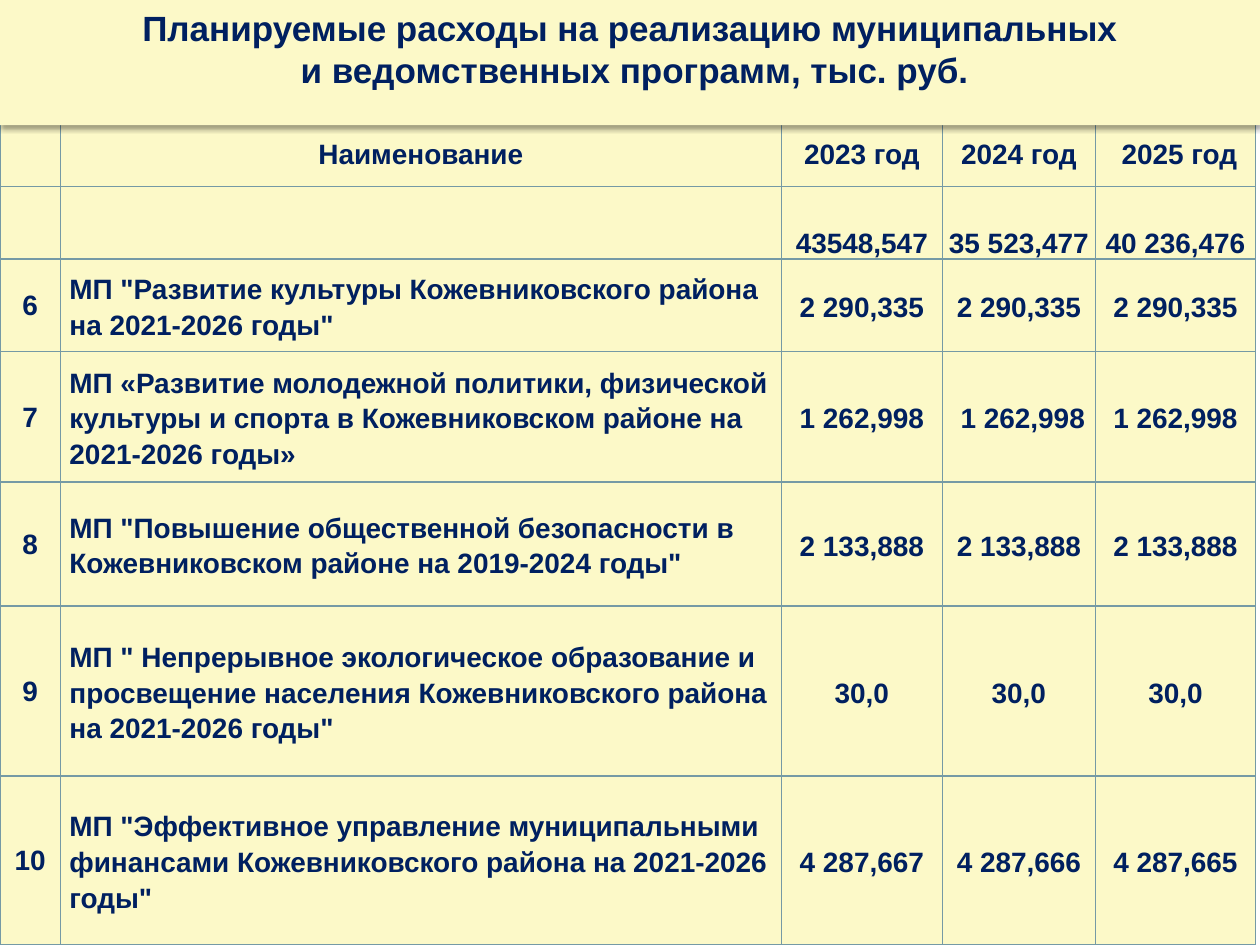
"""Build the slide of planned spending on municipal programmes."""
from dataclasses import dataclass

import pptx
import pptx.dml.color
import pptx.enum.shapes
import pptx.enum.text
import pptx.oxml
import pptx.oxml.ns
import pptx.util

Pt = pptx.util.Pt
Align = pptx.enum.text.PP_ALIGN
Anchor = pptx.enum.text.MSO_ANCHOR

HUES = {"cream": "FCF9C8", "navy": "002060", "edge": "759AA5", "shade": "000000"}
NS = pptx.oxml.ns.nsdecls("a")
WIDTHS = (34.5, 412, 92, 87.5, 91.5)
TITLE = (
    "Планируемые расходы на реализацию муниципальных",
    " и ведомственных программ, тыс. руб.",
)


@dataclass(frozen=True)
class Style:
    anchor: Anchor
    align: Align
    side: float
    top: float
    spacing: float


@dataclass(frozen=True)
class Row:
    height: float
    texts: tuple[str, ...]
    styles: tuple[Style, ...]


HEAD = Style(Anchor.MIDDLE, Align.CENTER, 0.7, 0.7, 1.0)
TOTAL = Style(Anchor.BOTTOM, Align.CENTER, 0.7, 0.7, 1.0)
NAME = Style(Anchor.MIDDLE, Align.LEFT, 5.2, 0, 1.15)
SUM = Style(Anchor.MIDDLE, Align.CENTER, 5.2, 0, 1.15)
ITEM = (HEAD, NAME, SUM, SUM, SUM)

ROWS = (
    Row(36.5, ("", "Наименование", "2023 год", "2024 год", " 2025 год"), (HEAD,) * 5),
    Row(41.5, ("", "", "43548,547", "35 523,477", "40 236,476"), (TOTAL,) * 5),
    Row(53, ("6", 'МП "Развитие культуры Кожевниковского района на 2021-2026 годы"',
             "2 290,335", "2 290,335", "2 290,335"), ITEM),
    Row(74.5, ("7", "МП «Развитие молодежной политики, физической культуры и спорта "
               "в Кожевниковском районе на 2021-2026 годы»",
               "1 262,998", " 1 262,998", "1 262,998"), ITEM),
    Row(71, ("8", 'МП "Повышение общественной безопасности в Кожевниковском районе '
             'на 2019-2024 годы"', "2 133,888", "2 133,888", "2 133,888"), ITEM),
    Row(97, ("9", 'МП " Непрерывное экологическое образование и просвещение населения '
             'Кожевниковского района на 2021-2026 годы"', "30,0", "30,0", "30,0"), ITEM),
    Row(96.5, ("10", 'МП "Эффективное управление муниципальными финансами '
               'Кожевниковского района на 2021-2026 годы"',
               "4 287,667", "4 287,666", "4 287,665"), ITEM),
)


def tint(name: str) -> pptx.dml.color.RGBColor:
    """Return a named colour."""
    return pptx.dml.color.RGBColor.from_string(HUES[name])


def set_font(para, size: float) -> None:
    """Apply the bold navy font to a paragraph."""
    font = para.font
    font.name, font.size, font.bold = "Arial", Pt(size), True
    font.color.rgb = tint("navy")


def add_edges(cell) -> None:
    """Outline a cell on its four sides."""
    props = cell._tc.get_or_add_tcPr()
    for spot, side in enumerate(("lnL", "lnR", "lnT", "lnB")):
        props.insert(spot, pptx.oxml.parse_xml(
            f'<a:{side} {NS} w="{Pt(1)}"><a:solidFill>'
            f'<a:srgbClr val="{HUES["edge"]}"/></a:solidFill></a:{side}>'))


def fill_cell(cell, text: str, style: Style) -> None:
    """Write and format one table cell."""
    cell.text = text
    cell.vertical_anchor = style.anchor
    cell.margin_left = cell.margin_right = Pt(style.side)
    cell.margin_top, cell.margin_bottom = Pt(style.top), Pt(0)
    cell.fill.solid()
    cell.fill.fore_color.rgb = tint("cream")
    para = cell.text_frame.paragraphs[0]
    para.alignment, para.line_spacing = style.align, style.spacing
    set_font(para, 16)
    add_edges(cell)


def add_grid(slide) -> None:
    """Add the table of programmes."""
    frame = slide.shapes.add_table(
        len(ROWS), len(WIDTHS), Pt(0), Pt(70),
        Pt(sum(WIDTHS)), Pt(sum(row.height for row in ROWS)))
    grid = frame.table
    grid.first_row = grid.horz_banding = False
    for col, width in zip(grid.columns, WIDTHS):
        col.width = Pt(width)
    for line, row in zip(grid.rows, ROWS):
        line.height = Pt(row.height)
        for cell, text, style in zip(line.cells, row.texts, row.styles):
            fill_cell(cell, text, style)


def add_title(slide) -> None:
    """Add the title band with its soft shadow."""
    band = slide.shapes.add_shape(
        pptx.enum.shapes.MSO_SHAPE.RECTANGLE, Pt(0), Pt(0), Pt(720), Pt(71.5))
    band.fill.solid()
    band.fill.fore_color.rgb = tint("cream")
    band.line.fill.background()
    band.shadow.inherit = False
    glow = band._element.spPr.find(pptx.oxml.ns.qn("a:effectLst"))
    glow.append(pptx.oxml.parse_xml(
        f'<a:outerShdw {NS} blurRad="{Pt(3.1)}" dist="{Pt(2)}" dir="5400000" '
        f'rotWithShape="0"><a:srgbClr val="{HUES["shade"]}">'
        '<a:alpha val="38000"/></a:srgbClr></a:outerShdw>'))
    frame = band.text_frame
    frame.word_wrap = True
    frame.vertical_anchor = Anchor.TOP
    frame.text = "\n".join(TITLE)
    for para in frame.paragraphs:
        para.alignment = Align.CENTER
        set_font(para, 20)


def main() -> None:
    """Build and save the deck."""
    deck = pptx.Presentation()
    deck.slide_width, deck.slide_height = Pt(720), Pt(540)
    slide = deck.slides.add_slide(deck.slide_layouts[6])
    add_grid(slide)
    add_title(slide)
    deck.save("out.pptx")


if __name__ == "__main__":
    main()
